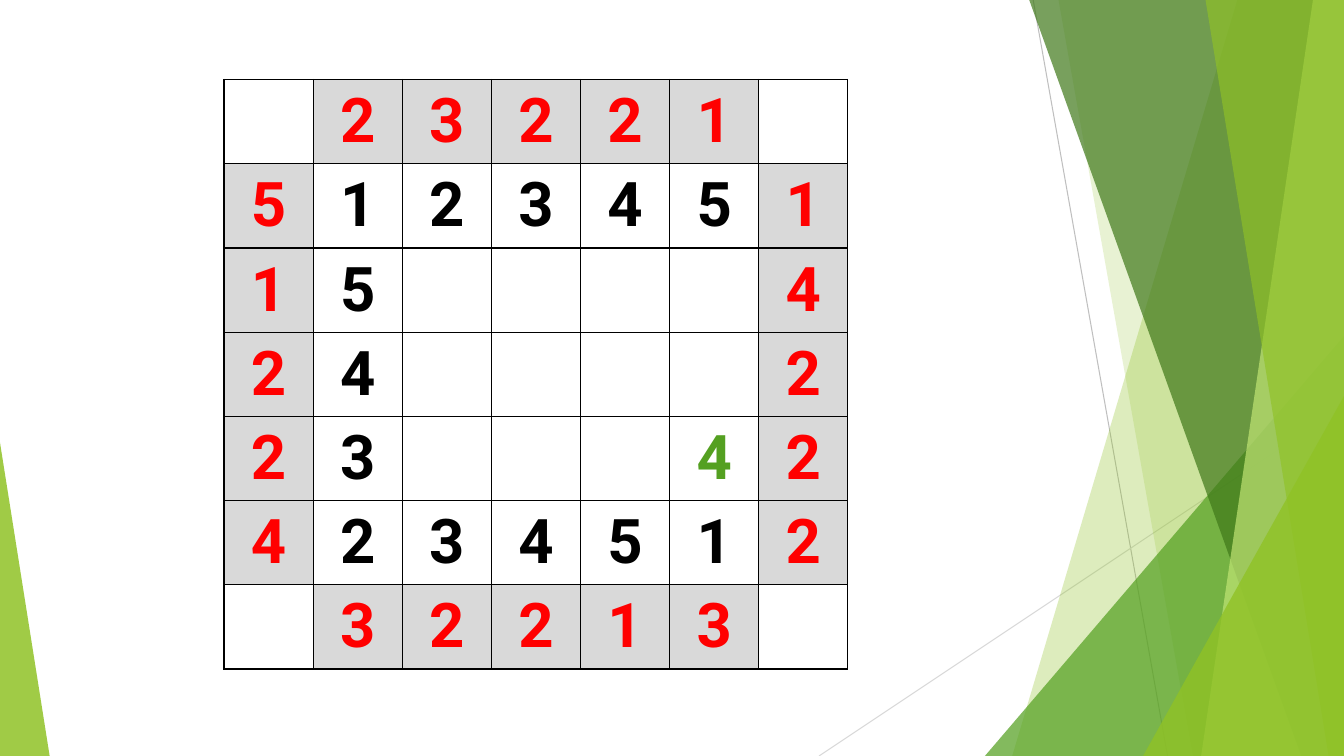
from lxml.etree import SubElement
from pptx import Presentation
from pptx.dml.color import RGBColor
from pptx.enum.shapes import MSO_CONNECTOR, MSO_SHAPE
from pptx.enum.text import MSO_ANCHOR, PP_ALIGN
from pptx.oxml.ns import qn
from pptx.util import Pt

COLORS = {
    "lime": "90C226",
    "pale_lime": "C0E474",
    "green": "54A021",
    "dark_green": "3F7819",
    "silver": "BFBFBF",
    "light_gray": "D9D9D9",
    "red": "FF0000",
    "black": "000000",
}
WIDTH, HEIGHT = 960, 540
TOP = -0.6

PUZZLE = [
    " 23221 ",
    "5123451",
    "15    4",
    "24    2",
    "23   42",
    "4234512",
    " 32213 ",
]
SOLVED_CELL = (4, 5)
COLUMN_WIDTH, ROW_HEIGHT = 63.67, 60.17


def rgb(name):
    return RGBColor.from_string(COLORS[name])


def paint(shape, color, opacity):
    shape.shadow.inherit = False
    shape.fill.solid()
    shape.fill.fore_color.rgb = rgb(color)
    shape.line.fill.background()
    color_element = shape.fill._xPr.find(qn("a:solidFill"))[0]
    SubElement(color_element, qn("a:alpha"), val=str(opacity * 1000))


def add_thin_line(slide, start, end, color):
    line = slide.shapes.add_connector(
        MSO_CONNECTOR.STRAIGHT, *(Pt(value) for value in start + end))
    line.line.color.rgb = rgb(color)
    line.line.width = Pt(0.75)
    SubElement(line._element.spPr, qn("a:effectLst"))


def add_band(slide, top_left, top_right, bottom_left, color, opacity):
    builder = slide.shapes.build_freeform(Pt(top_left), Pt(TOP))
    corners = [(top_right, TOP), (WIDTH, HEIGHT), (bottom_left, HEIGHT)]
    if top_right < WIDTH:
        corners.insert(1, (WIDTH, TOP))
    builder.add_line_segments([(Pt(x), Pt(y)) for x, y in corners])
    paint(builder.convert_to_shape(), color, opacity)


def add_corner_triangle(slide, left, top, width, apex, color, opacity):
    triangle = slide.shapes.add_shape(
        MSO_SHAPE.ISOSCELES_TRIANGLE, Pt(left), Pt(top), Pt(width), Pt(HEIGHT - top))
    triangle.adjustments[0] = apex
    paint(triangle, color, opacity)


def add_facets(slide):
    add_thin_line(slide, (738, 0), (834, HEIGHT), "silver")
    add_thin_line(slide, (WIDTH, 290), (585, HEIGHT), "light_gray")
    add_band(slide, 884, WIDTH, 723, "lime", 30)
    add_band(slide, 756, WIDTH, 852, "lime", 20)
    add_corner_triangle(slide, 703.5, 240, 256.5, 1, "green", 72)
    add_band(slide, 735, WIDTH, 929.5, "dark_green", 70)
    add_band(slide, 938, WIDTH, 858, "pale_lime", 70)
    add_band(slide, 861, WIDTH, 949, "lime", 65)
    add_corner_triangle(slide, 816.5, 283, 143.5, 1, "lime", 80)
    add_corner_triangle(slide, 0, 316, 35.5, 0, "lime", 85)


def add_borders(cell):
    properties = cell._tc.get_or_add_tcPr()
    for side in ("lnL", "lnR", "lnT", "lnB"):
        border = SubElement(properties, qn(f"a:{side}"), w=str(Pt(1)))
        fill = SubElement(border, qn("a:solidFill"))
        SubElement(fill, qn("a:srgbClr"), val=COLORS["black"])


def fill_cell(cell, digit, color, is_clue):
    add_borders(cell)
    if is_clue:
        cell.fill.solid()
        cell.fill.fore_color.rgb = rgb("light_gray")
    else:
        cell.fill.background()
    if digit == " ":
        return
    cell.vertical_anchor = MSO_ANCHOR.MIDDLE
    cell.text_frame.text = digit
    paragraph = cell.text_frame.paragraphs[0]
    paragraph.alignment = PP_ALIGN.CENTER
    font = paragraph.runs[0].font
    font.name = "Roboto"
    font.size = Pt(44)
    font.bold = True
    font.color.rgb = rgb(color)


def add_puzzle(slide):
    size = len(PUZZLE)
    table = slide.shapes.add_table(
        size, size, Pt(160), Pt(56.8),
        Pt(COLUMN_WIDTH * size), Pt(ROW_HEIGHT * size)).table
    table.first_row = False
    table.horz_banding = False
    for column in table.columns:
        column.width = Pt(COLUMN_WIDTH)
    for row in table.rows:
        row.height = Pt(ROW_HEIGHT)
    edges = (0, size - 1)
    for row_index, digits in enumerate(PUZZLE):
        for column_index, digit in enumerate(digits):
            is_clue = digit != " " and (row_index in edges or column_index in edges)
            color = "red" if is_clue else "black"
            if (row_index, column_index) == SOLVED_CELL:
                color = "green"
            fill_cell(table.cell(row_index, column_index), digit, color, is_clue)


def main():
    presentation = Presentation()
    presentation.slide_width = Pt(WIDTH)
    presentation.slide_height = Pt(HEIGHT)
    slide = presentation.slides.add_slide(presentation.slide_layouts[6])
    add_facets(slide)
    add_puzzle(slide)
    presentation.save("out.pptx")


if __name__ == "__main__":
    main()
